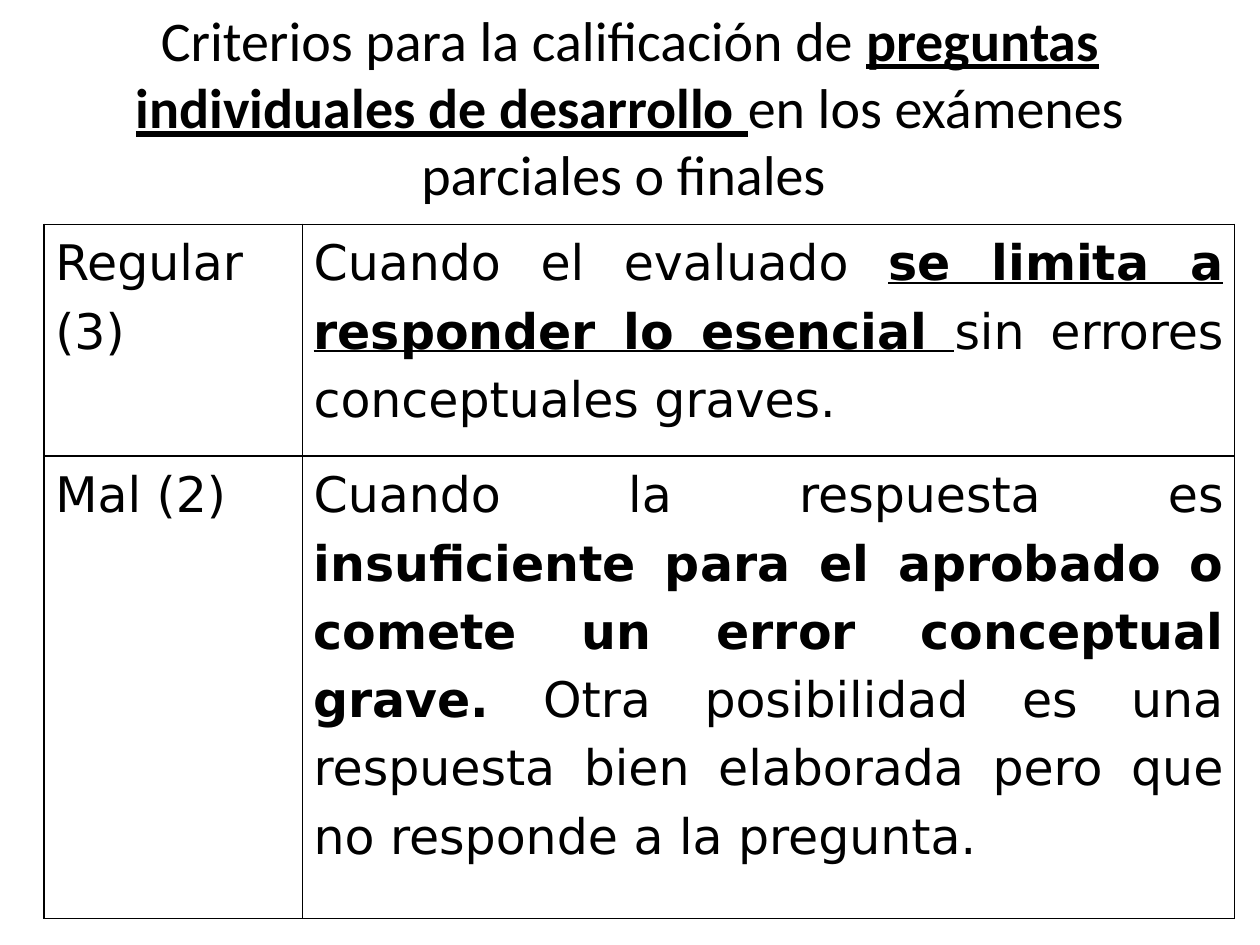
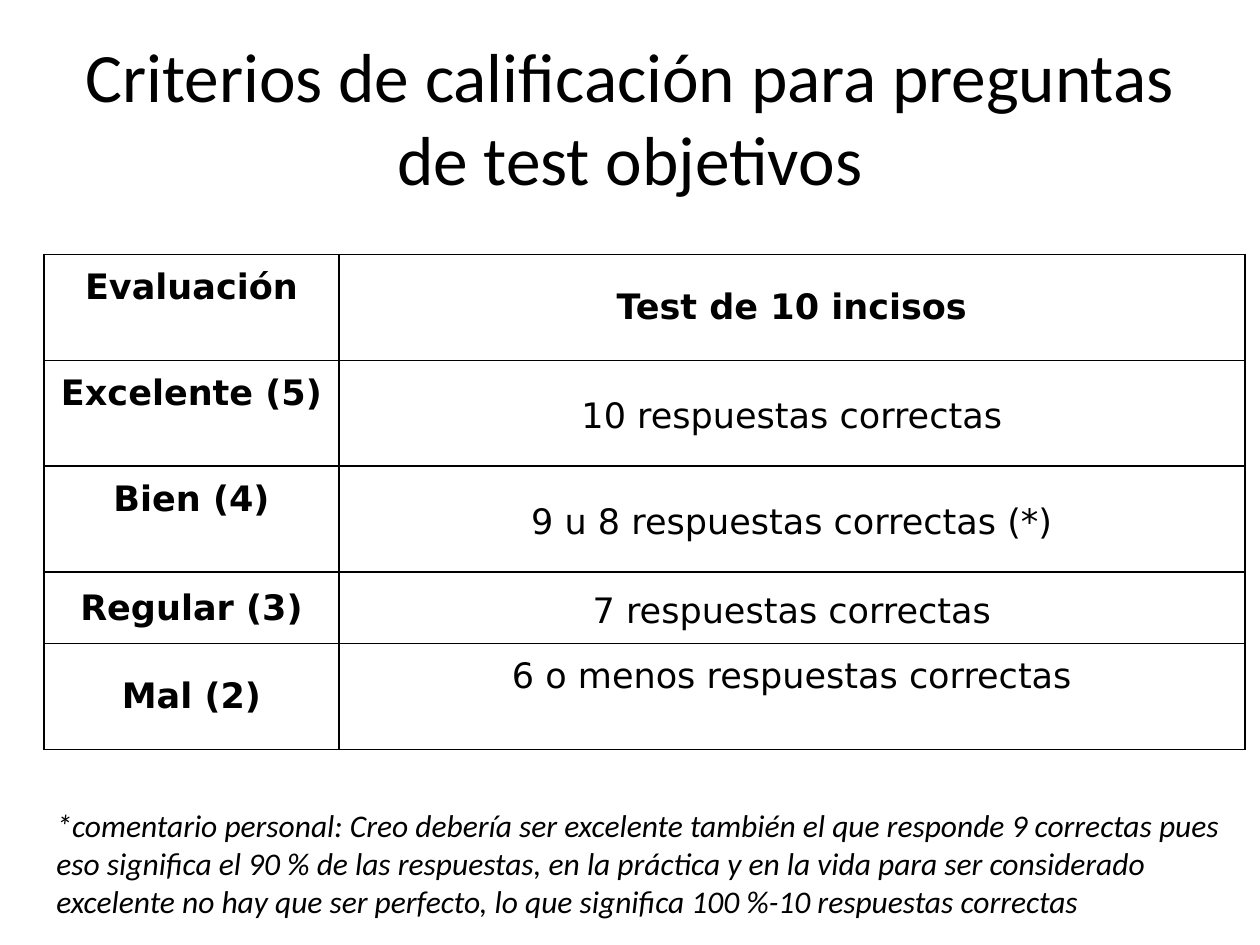
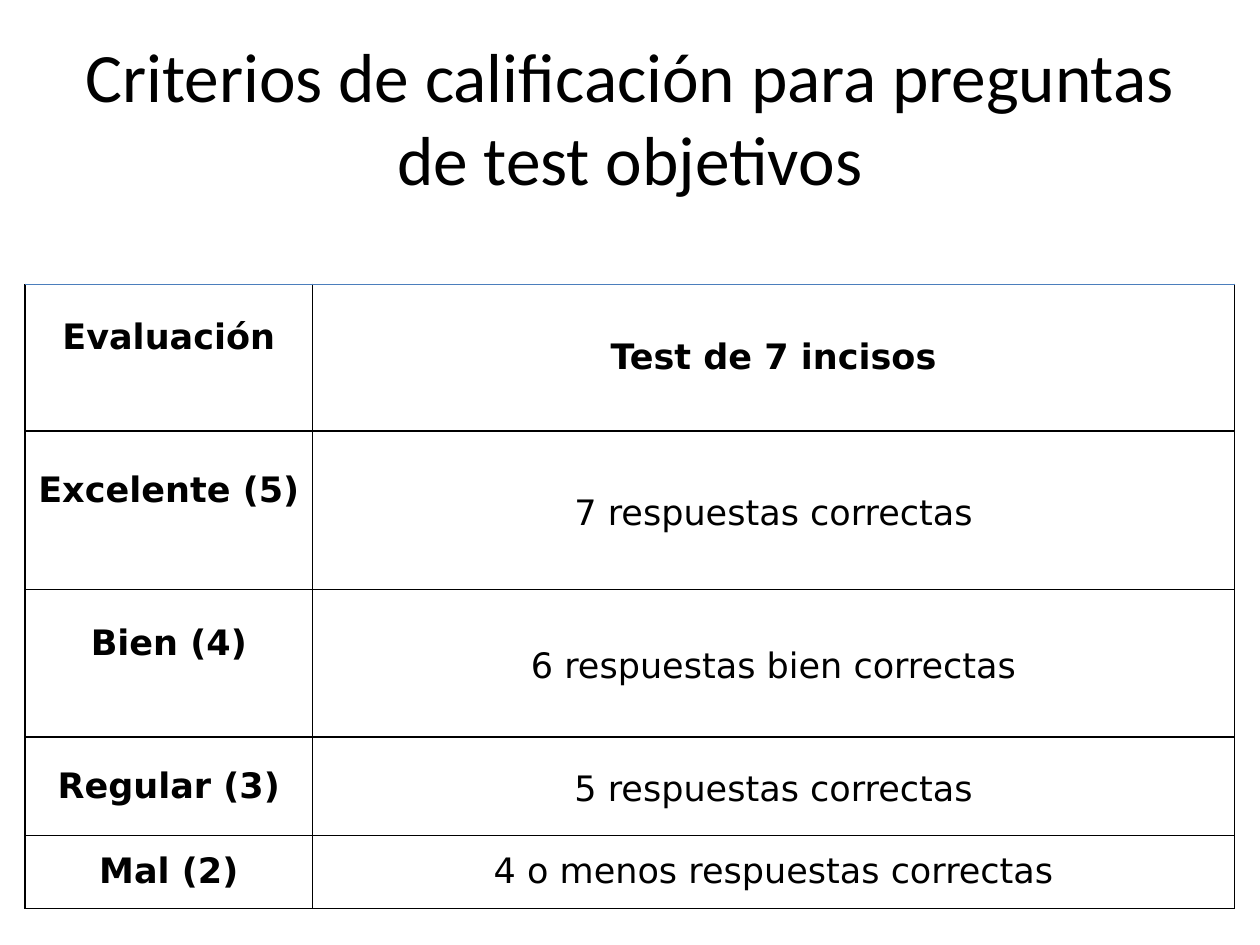
"""Builds three slides of grading criteria for exams and objective tests."""
from lxml.etree import SubElement
from pptx import Presentation
from pptx.dml.color import RGBColor
from pptx.enum.shapes import MSO_CONNECTOR
from pptx.enum.text import MSO_ANCHOR, PP_ALIGN
from pptx.oxml import parse_xml
from pptx.oxml.ns import nsdecls, qn
from pptx.util import Inches, Pt

WIDTH, HEIGHT = 10, 7.5
MARGIN = WIDTH * 0.05
COLORS = {"ink": "000000", "rule": "4B7EBC"}
TITLE_FONT, TABLE_FONT = "Calibri", "DejaVu Sans"
TEST_LINE = 0.32
ALL_SIDES = "LRTB"

ESSAY_TITLE = [
    ("Criterios para la calificación de ", ""),
    ("preguntas individuales de desarrollo ", "bu"),
    ("en los exámenes parciales o finales ", ""),
]
ESSAY_GRADES = [
    ("Regular (3)", [
        ("Cuando el evaluado ", ""),
        ("se limita a responder lo esencial ", "bu"),
        ("sin errores conceptuales graves.", ""),
    ]),
    ("Mal (2)", [
        ("Cuando la respuesta es ", ""),
        ("insuficiente para el aprobado o comete un error conceptual grave.", "b"),
        (" Otra posibilidad es una respuesta bien elaborada pero que "
         "no responde a la pregunta.", ""),
    ]),
]

TEST_TITLE = "Criterios de calificación para preguntas de test objetivos"
GRADES = ["Evaluación", "Excelente (5)", "Bien (4)", "Regular (3)", "Mal (2)"]
RAISED_GRADES = GRADES[:3]
TESTS = [
    {
        "answers": ["Test de 10 incisos", "10 respuestas correctas",
                    "9 u 8 respuestas correctas (*)", "7 respuestas correctas",
                    "6 o menos respuestas correctas"],
        "raised_answers": ["6 o menos respuestas correctas"],
        "corner": (0.35, 2.02),
        "columns": [2.34, 7.19],
        "rows": [0.84, 0.84, 0.84, 0.57, 0.84],
        "comment": "*comentario personal: Creo debería ser excelente también el que "
                   "responde 9 correctas pues eso significa el 90 % de las respuestas, "
                   "en la práctica y en la vida para ser considerado excelente no hay "
                   "que ser perfecto, lo que significa 100 %-10 respuestas correctas",
    },
    {
        "answers": ["Test de 7 incisos", "7 respuestas correctas",
                    "6 respuestas bien correctas", "5 respuestas correctas",
                    "4 o menos respuestas correctas"],
        "raised_answers": [],
        "corner": (0.2, 2.25),
        "columns": [2.28, 7.32],
        "rows": [1.17, 1.26, 1.17, 0.78, 0.58],
        "top_rule": 2.26,
    },
]


def write(frame, text, size=20, font=TABLE_FONT, style="", align=PP_ALIGN.CENTER,
          spacing=None):
    """Write a string, or (text, style) runs, as one formatted paragraph."""
    paragraph = frame.paragraphs[0]
    paragraph.alignment = align
    paragraph.line_spacing = spacing
    for words, marks in [(text, style)] if isinstance(text, str) else text:
        run = paragraph.add_run()
        run.text = words
        run.font.name, run.font.size = font, Pt(size)
        run.font.bold, run.font.italic = "b" in marks, "i" in marks
        run.font.underline = "u" in marks
        run.font.color.rgb = RGBColor.from_string(COLORS["ink"])


def add_text(slide, text, box, anchor=MSO_ANCHOR.MIDDLE, **look):
    """Add a wrapping Calibri text box."""
    frame = slide.shapes.add_textbox(*map(Inches, box)).text_frame
    frame.word_wrap = True
    frame.vertical_anchor = anchor
    write(frame, text, font=TITLE_FONT, **look)


def draw_borders(cell, sides):
    """Draw thin dark borders on the given sides and clear the others."""
    properties = cell._tc.get_or_add_tcPr()
    ink = f'<a:solidFill><a:srgbClr val="{COLORS["ink"]}"/></a:solidFill>'
    for place, side in enumerate(ALL_SIDES):
        paint = ink if side in sides else "<a:noFill/>"
        properties.insert(place, parse_xml(
            f'<a:ln{side} {nsdecls("a")} w="{Pt(1)}">{paint}</a:ln{side}>'))


def add_grid(slide, corner, columns, rows):
    """Add an unstyled table with the given column widths and row heights."""
    size = sum(columns), sum(rows)
    grid = slide.shapes.add_table(
        len(rows), len(columns), *map(Inches, (*corner, *size))).table
    grid.first_row = grid.horz_banding = False
    for column, width in zip(grid.columns, columns):
        column.width = Inches(width)
    for row, height in zip(grid.rows, rows):
        row.height = Inches(height)
    return grid


def fill_cell(cell, text, side_inset, bottom_inset=0, anchor=MSO_ANCHOR.TOP,
              borders=ALL_SIDES, **look):
    """Fill one bordered, transparent cell."""
    cell.margin_left = cell.margin_right = Inches(side_inset)
    cell.margin_top, cell.margin_bottom = 0, Inches(bottom_inset)
    cell.vertical_anchor = anchor
    cell.fill.background()
    draw_borders(cell, borders)
    write(cell.text_frame, text, **look)


def add_top_rule(slide, top):
    """Add the thin blue rule above a table."""
    rule = slide.shapes.add_connector(
        MSO_CONNECTOR.STRAIGHT, *map(Inches, (0.2, top, WIDTH - 0.2, top)))
    rule.line.color.rgb = RGBColor.from_string(COLORS["rule"])
    rule.line.width = Pt(0.75)
    SubElement(rule._element.spPr, qn("a:effectLst"))


def build_essay(slide):
    """Build the slide on essay questions."""
    add_text(slide, ESSAY_TITLE, (MARGIN, 0.13, WIDTH - 2 * MARGIN, 1.42), size=32)
    grid = add_grid(slide, (0.35, 1.78), [2.05, 7.4], [1.84, 3.67])
    for row, criteria in enumerate(ESSAY_GRADES):
        for column, text in enumerate(criteria):
            fill_cell(grid.cell(row, column), text, 0.09, size=28,
                      align=PP_ALIGN.JUSTIFY, spacing=1.2)


def build_test(slide, test):
    """Build a slide on one objective test."""
    add_text(slide, TEST_TITLE, (MARGIN, HEIGHT * 0.04, WIDTH - 2 * MARGIN, 1.25),
             size=39.6)
    grid = add_grid(slide, test["corner"], test["columns"], test["rows"])
    raised = RAISED_GRADES + test["raised_answers"]
    last = len(GRADES) - 1
    for row, pair in enumerate(zip(GRADES, test["answers"])):
        for column, text in enumerate(pair):
            fill_cell(
                grid.cell(row, column), text, 0.05,
                bottom_inset=TEST_LINE if text in raised else 0,
                anchor=MSO_ANCHOR.MIDDLE,
                borders="LRB" if row == 0 and "top_rule" in test else ALL_SIDES,
                style="b" if row == 0 or column == 0 else "",
                spacing=1.15 if column and 0 < row < last else None)
    if "comment" in test:
        add_text(slide, test["comment"],
                 (test["corner"][0], 6.35, sum(test["columns"]), 1.01),
                 anchor=MSO_ANCHOR.TOP, size=18, style="i", align=PP_ALIGN.LEFT)
    if "top_rule" in test:
        add_top_rule(slide, test["top_rule"])


def main():
    """Build and save the presentation."""
    deck = Presentation()
    deck.slide_width, deck.slide_height = Inches(WIDTH), Inches(HEIGHT)
    blank = deck.slide_layouts[6]
    build_essay(deck.slides.add_slide(blank))
    for test in TESTS:
        build_test(deck.slides.add_slide(blank), test)
    deck.save("out.pptx")


if __name__ == "__main__":
    main()
